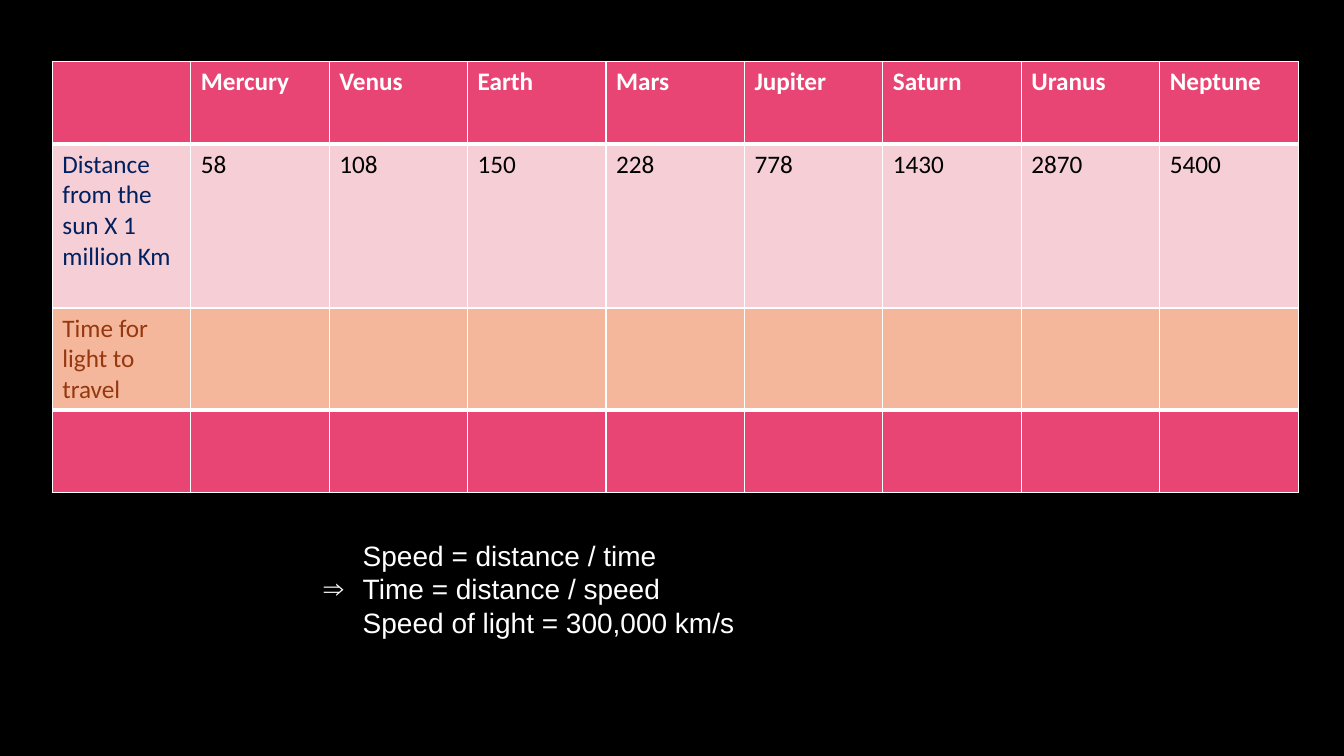
from lxml.etree import SubElement
from pptx import Presentation
from pptx.dml.color import RGBColor
from pptx.enum.text import MSO_AUTO_SIZE as AutoSize
from pptx.oxml.ns import qn
from pptx.util import Pt

BLACK = RGBColor(0x00, 0x00, 0x00)
WHITE = RGBColor(0xFF, 0xFF, 0xFF)
PINK = RGBColor(0xE8, 0x45, 0x74)
PALE_PINK = RGBColor(0xF6, 0xCF, 0xD6)
PEACH = RGBColor(0xF5, 0xB7, 0x9C)
NAVY = RGBColor(0x00, 0x20, 0x60)
RUST = RGBColor(0x95, 0x38, 0x0F)

DISTANCES = {"Mercury": 58, "Venus": 108, "Earth": 150, "Mars": 228,
             "Jupiter": 778, "Saturn": 1430, "Uranus": 2870, "Neptune": 5400}
BLANKS = [""] * len(DISTANCES)

# Each row: height, fill, label colour, value colour, bold, texts
ROWS = [
    (59, PINK, WHITE, WHITE, True, ["", *DISTANCES]),
    (117, PALE_PINK, NAVY, BLACK, False,
     ["Distance from the sun X 1 million Km", *map(str, DISTANCES.values())]),
    (73, PEACH, RUST, BLACK, False, ["Time for light to travel", *BLANKS]),
    (58.5, PINK, WHITE, WHITE, True, ["", *BLANKS]),
]
RULES = [1, 3, 1, 3, 1]  # horizontal line widths, top to bottom

# Each line: bullet, text
FORMULAS = [
    (None, "Speed = distance / time"),
    ("⇒", "Time = distance / speed"),
    (None, "Speed of light = 300,000 km/s"),
]


class SlideBuilder:
    table_font, table_size = "Calibri", 18
    text_font, text_size = "Arial", 20
    text_indent = 28

    def __init__(self, deck):
        self.slide = deck.slides.add_slide(deck.slide_layouts[6])

    def background(self, color):
        fill = self.slide.background.fill
        fill.solid()
        fill.fore_color.rgb = color

    def run(self, paragraph, text, font, size, color, bold=False):
        run = paragraph.add_run()
        run.text = text
        run.font.name = font
        run.font.size = Pt(size)
        run.font.bold = bold
        run.font.color.rgb = color

    def borders(self, cell, top, bottom):
        properties = cell._tc.get_or_add_tcPr()
        for side, width in zip("LRTB", (1, 1, top, bottom)):
            line = SubElement(properties, qn(f"a:ln{side}"), w=str(Pt(width)))
            fill = SubElement(line, qn("a:solidFill"))
            SubElement(fill, qn("a:srgbClr"), val=str(WHITE))

    def table(self, left, top, column_width, rows, rules):
        columns = len(rows[0][-1])
        height = sum(row[0] for row in rows)
        table = self.slide.shapes.add_table(
            len(rows), columns, Pt(left), Pt(top),
            Pt(column_width * columns), Pt(height)).table
        for column in table.columns:
            column.width = Pt(column_width)
        for r, (row_height, fill, label, value, bold, texts) in enumerate(rows):
            table.rows[r].height = Pt(row_height)
            for c, text in enumerate(texts):
                cell = table.cell(r, c)
                self.borders(cell, rules[r], rules[r + 1])
                cell.fill.solid()
                cell.fill.fore_color.rgb = fill
                if text:
                    self.run(cell.text_frame.paragraphs[0], text, self.table_font,
                             self.table_size, value if c else label, bold)

    def text(self, left, top, width, height, lines):
        frame = self.slide.shapes.add_textbox(
            Pt(left), Pt(top), Pt(width), Pt(height)).text_frame
        frame.word_wrap = True
        frame.auto_size = AutoSize.SHAPE_TO_FIT_TEXT
        for i, (bullet, text) in enumerate(lines):
            paragraph = frame.add_paragraph() if i else frame.paragraphs[0]
            properties = paragraph._p.get_or_add_pPr()
            properties.set("marL", str(Pt(self.text_indent)))
            properties.set("indent", str(Pt(-self.text_indent if bullet else 0)))
            if bullet:
                SubElement(properties, qn("a:buFont"), typeface=self.text_font)
                SubElement(properties, qn("a:buChar"), char=bullet)
            self.run(paragraph, text, self.text_font, self.text_size, WHITE)


def main():
    deck = Presentation()
    deck.slide_width, deck.slide_height = Pt(960), Pt(540)
    planets = SlideBuilder(deck)
    planets.background(BLACK)

    # Planet distances
    planets.table(37.4, 44, 98.9, ROWS, RULES)

    # Speed formulas
    planets.text(224, 381, 550, 80, FORMULAS)

    deck.save("out.pptx")


if __name__ == "__main__":
    main()
